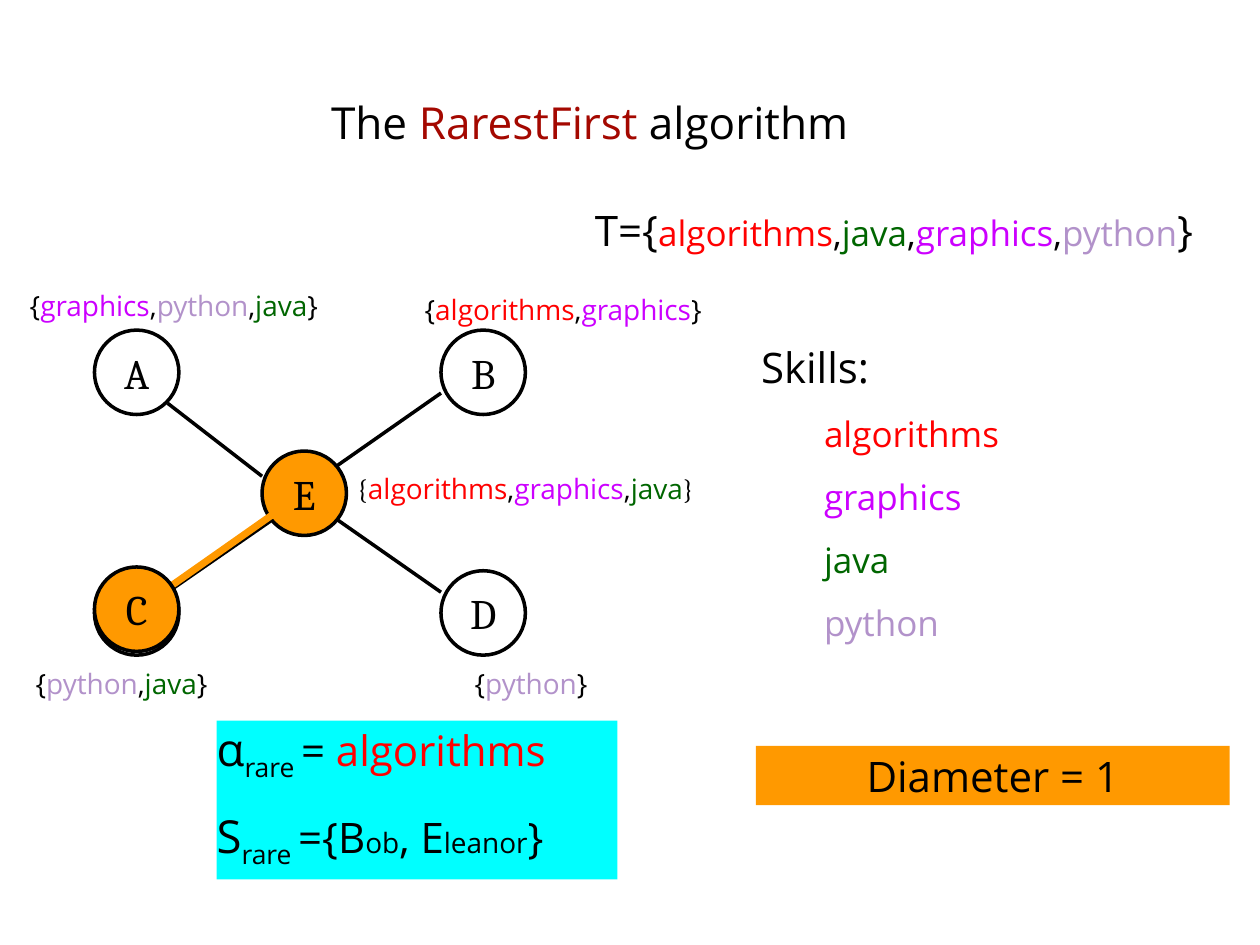
from lxml import etree
from pptx import Presentation
from pptx import util as u
from pptx.dml.color import RGBColor
from pptx.enum import shapes, text
from pptx.oxml.ns import qn

BLACK = RGBColor(0x00, 0x00, 0x00)
DARK_RED = RGBColor(0xA4, 0x08, 0x00)
RED = RGBColor(0xFF, 0x00, 0x00)
ORANGE = RGBColor(0xFF, 0x99, 0x00)
CYAN = RGBColor(0x00, 0xFF, 0xFF)
SKILLS = {
    "algorithms": RED,
    "graphics": RGBColor(0xCC, 0x00, 0xFF),
    "java": RGBColor(0x00, 0x66, 0x00),
    "python": RGBColor(0xB2, 0x92, 0xCA),
}
SANS, SERIF = "Open Sans", "Cambria"
CENTER = text.PP_ALIGN.CENTER
NODE = 0.67  # node diameter


def run(words, **fmt):
    return words, fmt


def skill_set(names, opening="{", **brace):
    """Runs for a bracketed, comma-separated set of coloured skills."""
    runs = [run(opening, **brace)]
    for i, name in enumerate(names):
        if i:
            runs.append(run(","))
        runs.append(run(name, color=SKILLS[name]))
    return runs + [run("}", **brace)]


def write(sp, paragraphs, size=24, font=SANS, align=None, before=14.4,
          anchor=text.MSO_ANCHOR.TOP, inset=0.04, wrap=True):
    """Fill a shape with paragraphs, each one a list of runs."""
    tf = sp.text_frame
    tf.word_wrap = wrap
    tf.vertical_anchor = anchor
    tf.margin_left = tf.margin_right = u.Inches(inset)
    tf.margin_top = tf.margin_bottom = u.Inches(inset)
    for i, runs in enumerate(paragraphs):
        p = tf.paragraphs[0] if i == 0 else tf.add_paragraph()
        p.alignment = align or text.PP_ALIGN.LEFT
        p.space_before = u.Pt(before if i == 0 or size == 16 else min(before, 14.4))
        for words, fmt in runs:
            r = p.add_run()
            r.text = words
            r.font.size = u.Pt(fmt.get("size", size))
            r.font.name = fmt.get("font", font)
            r.font.color.rgb = fmt.get("color", BLACK)
            if "base" in fmt:
                r.font._element.set("baseline", str(fmt["base"] * 1000))
    return sp


def add_text(slide, box, paragraphs, **fmt):
    sp = slide.shapes.add_textbox(*map(u.Inches, box))
    return write(sp, paragraphs, **fmt)


def add_shape(slide, kind, box, fill=None, line=None):
    sp = slide.shapes.add_shape(kind, *map(u.Inches, box))
    sp.shadow.inherit = False
    if fill is None:
        sp.fill.background()
    else:
        sp.fill.solid()
        sp.fill.fore_color.rgb = fill
    if line is None:
        sp.line.fill.background()
    else:
        sp.line.color.rgb = line
        sp.line.width = u.Pt(2)
    return sp


def add_edge(slide, x1, y1, x2, y2, color=BLACK, width=2):
    c = slide.shapes.add_connector(shapes.MSO_CONNECTOR.STRAIGHT,
                                   *map(u.Inches, (x1, y1, x2, y2)))
    c.line.color.rgb = color
    c.line.width = u.Pt(width)
    etree.SubElement(c._element.spPr, qn("a:effectLst"))


def add_node(slide, x, y, letter, fill=None):
    sp = add_shape(slide, shapes.MSO_SHAPE.OVAL, (x, y, NODE, NODE), fill, BLACK)
    write(sp, [[run(letter)]], font=SERIF, align=CENTER, wrap=False,
          anchor=text.MSO_ANCHOR.MIDDLE)


def draw_graph(slide, x, y):
    """Four people around E; x, y is the top left corner of node A."""
    right, bottom = x + 2.75, y + 1.91
    # Outer nodes
    for letter, left, top in (("A", x, y), ("B", right, y),
                              ("C", x, bottom), ("D", right, bottom)):
        add_node(slide, left, top, letter)
    # Edges to the centre
    for x1, y1, x2, y2 in ((0.58, 2.08, 1.42, 1.5), (0.58, 0.58, 1.33, 1.16),
                           (1.92, 1.5, 2.75, 2.08), (1.92, 1.08, 2.75, 0.5)):
        add_edge(slide, x + x1, y + y1, x + x2, y + y2)
    # Skills of each person
    labels = (
        (-0.75, -0.37, 2.76, ("graphics", "python", "java"), SANS),
        (2.42, -0.34, 2.6, ("algorithms", "graphics"), SANS),
        (1.83, 1.08, 3.18, ("algorithms", "graphics", "java"), SERIF),
        (-1, 2.63, 2.43, ("python", "java"), SANS),
        (2.25, 2.63, 2.43, ("python",), SANS),
    )
    for dx, dy, width, names, brace_font in labels:
        add_text(slide, (x + dx, y + dy, width, 0.33),
                 [skill_set(names, font=brace_font)],
                 size=16, align=CENTER, before=9.5)
    # Chosen team: E, C and the edge between them
    add_node(slide, x + 1.33, y + 0.96, "E", ORANGE)
    add_edge(slide, x + 0.58, y + 2.05, x + 1.42, y + 1.46, ORANGE, 4)
    add_node(slide, x, bottom - 0.03, "C", ORANGE)


def draw_heading(slide, x, y, width):
    add_text(slide, (x, y, width, 0.55),
             [[run("The "), run("RarestFirst", color=DARK_RED), run(" algorithm")]],
             size=25.2, align=CENTER, anchor=text.MSO_ANCHOR.BOTTOM)


def draw_task(slide, x, y, width):
    add_text(slide, (x, y, width, 0.47),
             [skill_set(("algorithms", "java", "graphics", "python"), "T={", size=24)],
             size=20, align=CENTER)


def draw_skills(slide, x, y, width):
    """Skill list, with the team's diameter in a bar below it."""
    rows = [[run("\t"), run(name, color=color)] for name, color in SKILLS.items()]
    sp = add_text(slide, (x, y, width, 2.42),
                  [[run("Skills:", size=24)]] + rows, size=20)
    for p in sp.text_frame.paragraphs[1:]:
        p.space_before = u.Pt(12)
    bar = add_shape(slide, shapes.MSO_SHAPE.RECTANGLE, (x, y + 3.25, width, 0.47), ORANGE)
    write(bar, [[run("Diameter = 1")]], align=CENTER)


def draw_rarest(slide, x, y, width, height):
    rare = run("rare ", size=26, base=-25)
    sp = add_shape(slide, shapes.MSO_SHAPE.RECTANGLE, (x, y, width, height), CYAN)
    write(sp, [
        [run("α", size=26), rare, run("= "), run("algorithms", color=RED)],
        [run("S", size=26), rare, run("={B"), run("ob", size=16),
         run(", E"), run("leanor", size=16), run("}")],
    ], inset=0)


def main():
    prs = Presentation()
    prs.slide_width, prs.slide_height = u.Inches(10), u.Inches(7.5)
    slide = prs.slides.add_slide(prs.slide_layouts[6])
    draw_heading(slide, 0.17, 0.67, 9.02)
    draw_task(slide, 4.42, 1.58, 5.35)
    draw_graph(slide, 0.75, 2.62)
    draw_skills(slide, 6, 2.67, 3.76)
    draw_rarest(slide, 1.72, 5.72, 3.18, 1.26)
    prs.save("out.pptx")


if __name__ == "__main__":
    main()
